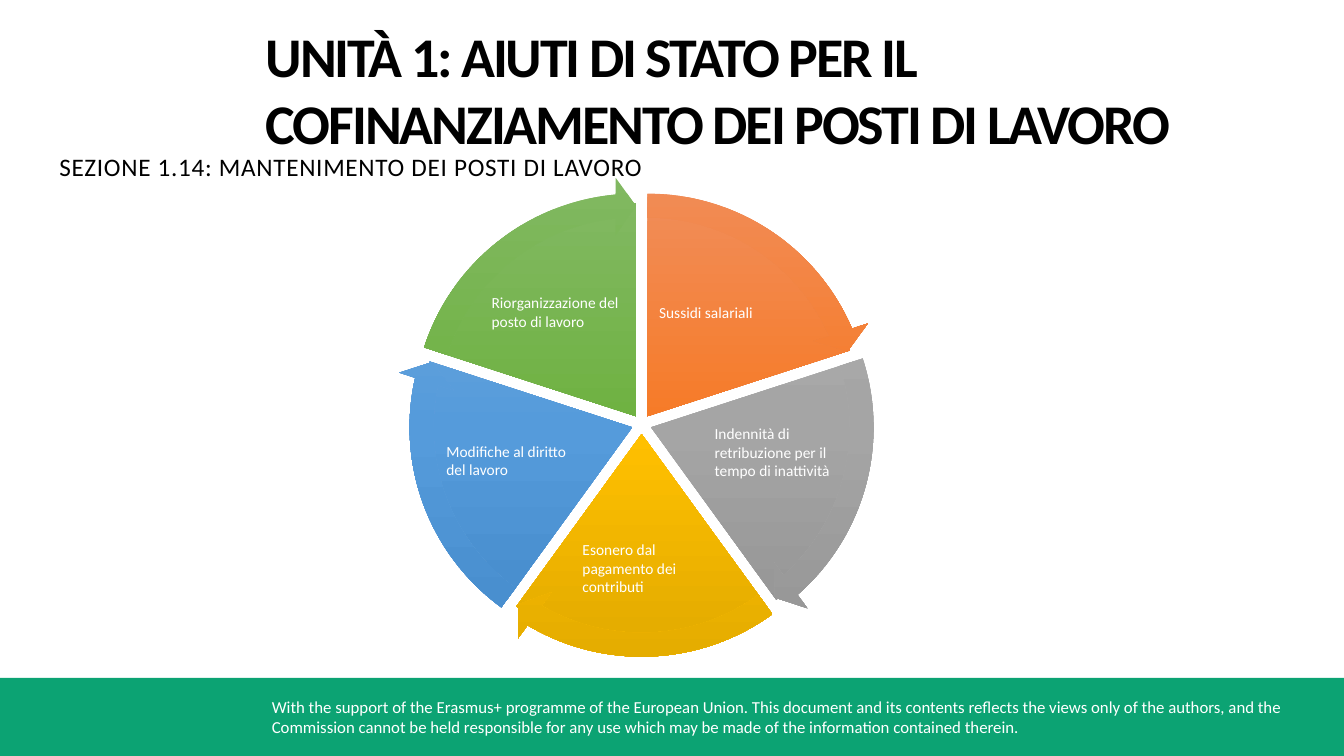
from copy import deepcopy
from dataclasses import dataclass
from math import cos, radians, sin

from lxml.etree import SubElement
from pptx import Presentation
from pptx.dml.color import RGBColor
from pptx.enum.shapes import MSO_SHAPE
from pptx.enum.text import MSO_ANCHOR, MSO_AUTO_SIZE, PP_ALIGN
from pptx.oxml.ns import qn
from pptx.util import Cm, Pt


@dataclass(frozen=True)
class Theme:
    font: str = "Calibri"
    ink: str = "000000"
    light: str = "FFFFFF"
    footer: str = "0CA373"
    title_size: int = 40
    section_size: int = 18
    footer_size: int = 12
    label_size: int = 11
    orange: tuple = ("F18C57", "F67B28", "E56C19")
    grey: tuple = ("AFAFAF", "A5A5A5", "939393")
    yellow: tuple = ("FFC64B", "FFC000", "E3AB00")
    blue: tuple = ("71A6DB", "559BDB", "448ACA")
    green: tuple = ("81B861", "6FB242", "62A336")


@dataclass(frozen=True)
class Box:
    """A rectangle in centimetres."""
    left: float
    top: float
    width: float
    height: float

    def lengths(self):
        return [Cm(value) for value in (self.left, self.top, self.width, self.height)]


THEME = Theme()
TITLE = "UNITÀ 1: AIUTI DI STATO PER IL COFINANZIAMENTO DEI POSTI DI LAVORO"
SECTION = "SEZIONE 1.14: MANTENIMENTO DEI POSTI DI LAVORO"
SUPPORT = (
    "With the support of the Erasmus+ programme of the European Union. "
    "This document and its contents reflects the views only of the authors, and the "
    "Commission cannot be held responsible for any use which may be made of the "
    "information contained therein."
)
# Label, colours, label box relative to the wheel's centre, bottom inset
SEGMENTS = [
    ("Sussidi salariali", THEME.orange, Box(0.39, -3.78, 3.45, 2.31), 0.46),
    ("Indennità di retribuzione per il tempo di inattività", THEME.grey,
     Box(1.79, -0.38, 3.2, 2.57), 0.46),
    ("Esonero dal pagamento dei contributi", THEME.yellow,
     Box(-1.54, 2.42, 3.07, 2.82), 0.46),
    ("Modifiche al diritto del lavoro", THEME.blue,
     Box(-4.97, -0.38, 3.2, 2.57), 0.05),
    ("Riorganizzazione del posto di lavoro", THEME.green,
     Box(-3.83, -3.78, 3.45, 2.31), 0.46),
]


def write_text(frame, text, size, color, bold=False, spacing=0):
    frame.word_wrap = True
    frame.auto_size = MSO_AUTO_SIZE.NONE
    para = frame.paragraphs[0]
    para.alignment = PP_ALIGN.LEFT
    para.space_before = Pt(0)
    span = para.add_run()
    span.text = text
    span.font.name = THEME.font
    span.font.size = Pt(size)
    span.font.bold = bold
    span.font.color.rgb = RGBColor.from_string(color)
    if spacing:
        span.font._element.set("spc", str(spacing))
    return para


def place(shape, box):
    shape.left, shape.top, shape.width, shape.height = box.lengths()


def add_headings(page, title_box, section_box):
    title, section = page.shapes.title, page.placeholders[1]
    place(title, title_box)
    place(section, section_box)
    frame = title.text_frame
    frame.vertical_anchor = MSO_ANCHOR.TOP
    frame.margin_left = frame.margin_right = frame.margin_bottom = 0
    frame.margin_top = Cm(0.03)
    write_text(frame, TITLE, THEME.title_size, THEME.ink, True, -150)

    para = write_text(section.text_frame, SECTION, THEME.section_size, THEME.ink, spacing=50)
    properties = para._p.get_or_add_pPr()
    properties.set("marL", "0")
    properties.set("indent", "0")
    SubElement(properties, qn("a:buNone"))


def add_footer(page, box):
    band = page.shapes.add_shape(MSO_SHAPE.RECTANGLE, *box.lengths())
    band.shadow.inherit = False
    band.fill.solid()
    band.fill.fore_color.rgb = RGBColor.from_string(THEME.footer)
    band.line.fill.background()
    text_box = Box(box.left + 6.6, box.top + 0.35, 26.47, 1.27)
    note = page.shapes.add_textbox(*text_box.lengths())
    write_text(note.text_frame, SUPPORT, THEME.footer_size, THEME.light)


def add_round_shape(page, kind, center, diameter, adjustments, colors):
    """Draw a shape around a centre with a three-colour downward gradient."""
    x, y = center
    box = Box(x - diameter / 2, y - diameter / 2, diameter, diameter)
    shape = page.shapes.add_shape(kind, *box.lengths())
    shape.shadow.inherit = False
    shape.line.fill.background()
    for index, value in enumerate(adjustments):
        shape.adjustments[index] = value
    shape.fill.gradient()
    shape.fill.gradient_angle = 270
    stops = shape._element.spPr.find(qn("a:gradFill")).find(qn("a:gsLst"))
    stops.append(deepcopy(stops[-1]))
    for stop, color, position in zip(shape.fill.gradient_stops, colors, (0, 0.5, 1)):
        stop.color.rgb = RGBColor.from_string(color)
        stop.position = position


def add_label(page, text, box, bottom_inset):
    label = page.shapes.add_textbox(*box.lengths())
    frame = label.text_frame
    frame.vertical_anchor = MSO_ANCHOR.MIDDLE
    frame.margin_left = frame.margin_top = frame.margin_right = Cm(0.05)
    frame.margin_bottom = Cm(bottom_inset)
    write_text(frame, text, THEME.label_size, THEME.light)


def add_wheel(page, box):
    """Draw equal slices pushed out from the centre, each edged by an arrow."""
    x, y = box.left + box.width / 2, box.top + box.height / 2
    sweep = 360 / len(SEGMENTS)
    pie_size, gap = box.width * 0.89, 0.25
    unit = 0.6  # adjustment value of one degree
    arrows = []
    for index, (text, colors, offset, bottom_inset) in enumerate(SEGMENTS):
        start = (270 + index * sweep) % 360
        end = (start + sweep) % 360
        middle = radians(start + sweep / 2)
        center = (x + gap * cos(middle), y + gap * sin(middle))
        add_round_shape(page, MSO_SHAPE.PIE, center, pie_size,
                        (start * unit, end * unit), colors)
        label_box = Box(x + offset.left, y + offset.top, offset.width, offset.height)
        add_label(page, text, label_box, bottom_inset)
        arrow = (0.05, 3.28, end * unit - 3.28, start * unit, 0.06)
        arrows.append((center, box.width, arrow, colors))
    for arrow in arrows:
        add_round_shape(page, MSO_SHAPE.CIRCULAR_ARROW, *arrow)


def main():
    deck = Presentation()
    deck.slide_width, deck.slide_height = Cm(33.87), Cm(19.05)
    page = deck.slides.add_slide(deck.slide_layouts[1])
    add_footer(page, Box(0, 17.08, 33.87, 1.97))
    add_wheel(page, Box(10.14, 4.66, 12.06, 12.06))
    add_headings(page, Box(6.7, 0.5, 22.8, 5.2), Box(1.24, 3.68, 16.92, 1.83))
    deck.save("out.pptx")


if __name__ == "__main__":
    main()
